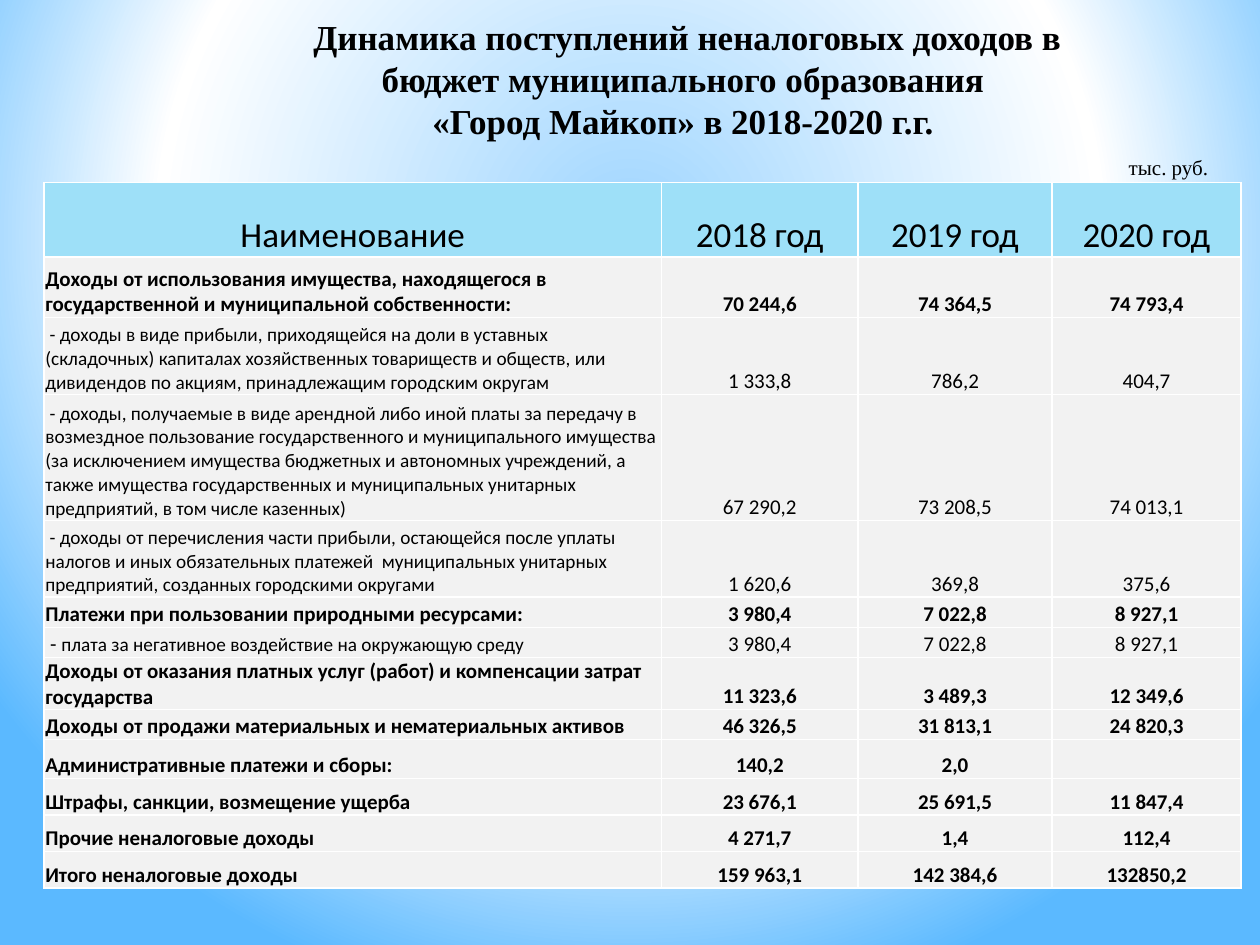
import pptx
import pptx.util
import pptx.dml.color
import pptx.enum.text
import pptx.oxml.ns
import lxml.etree

Inches = pptx.util.Inches
qn = pptx.oxml.ns.qn
sub = lxml.etree.SubElement
Align = pptx.enum.text.PP_ALIGN
Anchor = pptx.enum.text.MSO_ANCHOR


def color(code):
    return pptx.dml.color.RGBColor.from_string(code)


def write(para, text, size=12, bold=False, face="Calibri", align=Align.LEFT):
    para.alignment = align
    run = para.add_run()
    run.text = text
    run.font.size = pptx.util.Pt(size)
    run.font.bold = bold
    run.font.name = face
    run.font.color.rgb = color("000000")


deck = pptx.Presentation()
deck.slide_width = Inches(10)
deck.slide_height = Inches(7.5)
slide = deck.slides.add_slide(deck.slide_layouts[6])

slide.background.fill.gradient()
grad = next(slide.element.iter(qn("a:gradFill")))
for child in list(grad):
    grad.remove(child)
stops = sub(grad, qn("a:gsLst"))
for pos, code in [(0, "9ED5FF"), (60, "FFFFFF"), (100, "5BB9FF")]:
    stop = sub(stops, qn("a:gs"), pos=str(pos * 1000))
    sub(stop, qn("a:srgbClr"), val=code)
path = sub(grad, qn("a:path"), path="circle")
sub(path, qn("a:fillToRect"), l="20000", t="10000", r="20000", b="60000")

unit = slide.shapes.add_textbox(Inches(8.86), Inches(1.18), Inches(0.91), Inches(0.3)).text_frame
unit.word_wrap = True
write(unit.paragraphs[0], "тыс. руб.", face="Times New Roman")

rows = [
    (0.59, 20, False, "Наименование", "2018 год", "2019 год", "2020 год"),
    (0.48, 12, True, "Доходы от использования имущества, находящегося в государственной и муниципальной собственности:",
     "70 244,6", "74 364,5", "74 793,4"),
    (0.61, 11, False, " - доходы в виде прибыли, приходящейся на доли в уставных (складочных) капиталах "
     "хозяйственных товариществ и обществ, или дивидендов по акциям, принадлежащим городским округам",
     "1 333,8", "786,2", "404,7"),
    (1, 11, False, " - доходы, получаемые в виде арендной либо иной платы за передачу в возмездное пользование "
     "государственного и муниципального имущества (за исключением имущества бюджетных и автономных учреждений, "
     "а также имущества государственных и муниципальных унитарных предприятий, в том числе казенных)",
     "67 290,2", "73 208,5", "74 013,1"),
    (0.61, 11, False, " - доходы от перечисления части прибыли, остающейся после уплаты налогов и иных "
     "обязательных платежей  муниципальных унитарных предприятий, созданных городскими округами",
     "1 620,6", "369,8", "375,6"),
    (0.24, 12, True, "Платежи при пользовании природными ресурсами:", "3 980,4", "7 022,8", "8 927,1"),
    (0.24, 11, False, "плата за негативное воздействие на окружающую среду", "3 980,4", "7 022,8", "8 927,1"),
    (0.41, 12, True, "Доходы от оказания платных услуг (работ) и компенсации затрат государства",
     "11 323,6", "3 489,3", "12 349,6"),
    (0.24, 12, True, "Доходы от продажи материальных и нематериальных активов", "46 326,5", "31 813,1", "24 820,3"),
    (0.29, 12, True, "Административные платежи и сборы:", "140,2", "2,0", ""),
    (0.29, 12, True, "Штрафы, санкции, возмещение ущерба", "23 676,1", "25 691,5", "11 847,4"),
    (0.29, 12, True, "Прочие неналоговые доходы", "4 271,7", "1,4", "112,4"),
    (0.29, 12, True, "Итого неналоговые доходы", "159 963,1", "142 384,6", "132850,2"),
]
table = slide.shapes.add_table(len(rows), 4, Inches(0.35), Inches(1.45), Inches(9.49), Inches(5.61)).table
for col, width in zip(table.columns, [4.9, 1.56, 1.54, 1.5]):
    col.width = Inches(width)

for r, (height, size, bold, *texts) in enumerate(rows):
    table.rows[r].height = Inches(height)
    for c, text in enumerate(texts):
        cell = table.cell(r, c)
        cell.margin_left = cell.margin_right = cell.margin_top = Inches(0.01)
        cell.margin_bottom = 0
        cell.vertical_anchor = Anchor.BOTTOM
        props = cell._tc.get_or_add_tcPr()
        for side in ["a:lnL", "a:lnR", "a:lnT", "a:lnB"]:
            line = sub(props, qn(side), w=str(pptx.util.Pt(1)))
            sub(sub(line, qn("a:solidFill")), qn("a:srgbClr"), val="FFFFFF")
        cell.fill.solid()
        cell.fill.fore_color.rgb = color("F2F2F2" if r else "9EE0F8")
        para = cell.text_frame.paragraphs[0]
        if text.startswith("плата"):
            write(para, " - ")
        write(para, text, size=max(size, 12) if c else size, bold=bold,
              align=Align.LEFT if r and not c else Align.CENTER)

title = slide.shapes.add_textbox(Inches(2.05), Inches(0.07), Inches(6.81), Inches(1.11)).text_frame
title.word_wrap = True
heads = ["Динамика поступлений неналоговых доходов в бюджет муниципального образования ",
         "«Город Майкоп» в 2018-2020 г.г. "]
for i, text in enumerate(heads):
    para = title.add_paragraph() if i else title.paragraphs[0]
    write(para, text, size=20, bold=True, face="Times New Roman", align=Align.CENTER)

deck.save("out.pptx")
